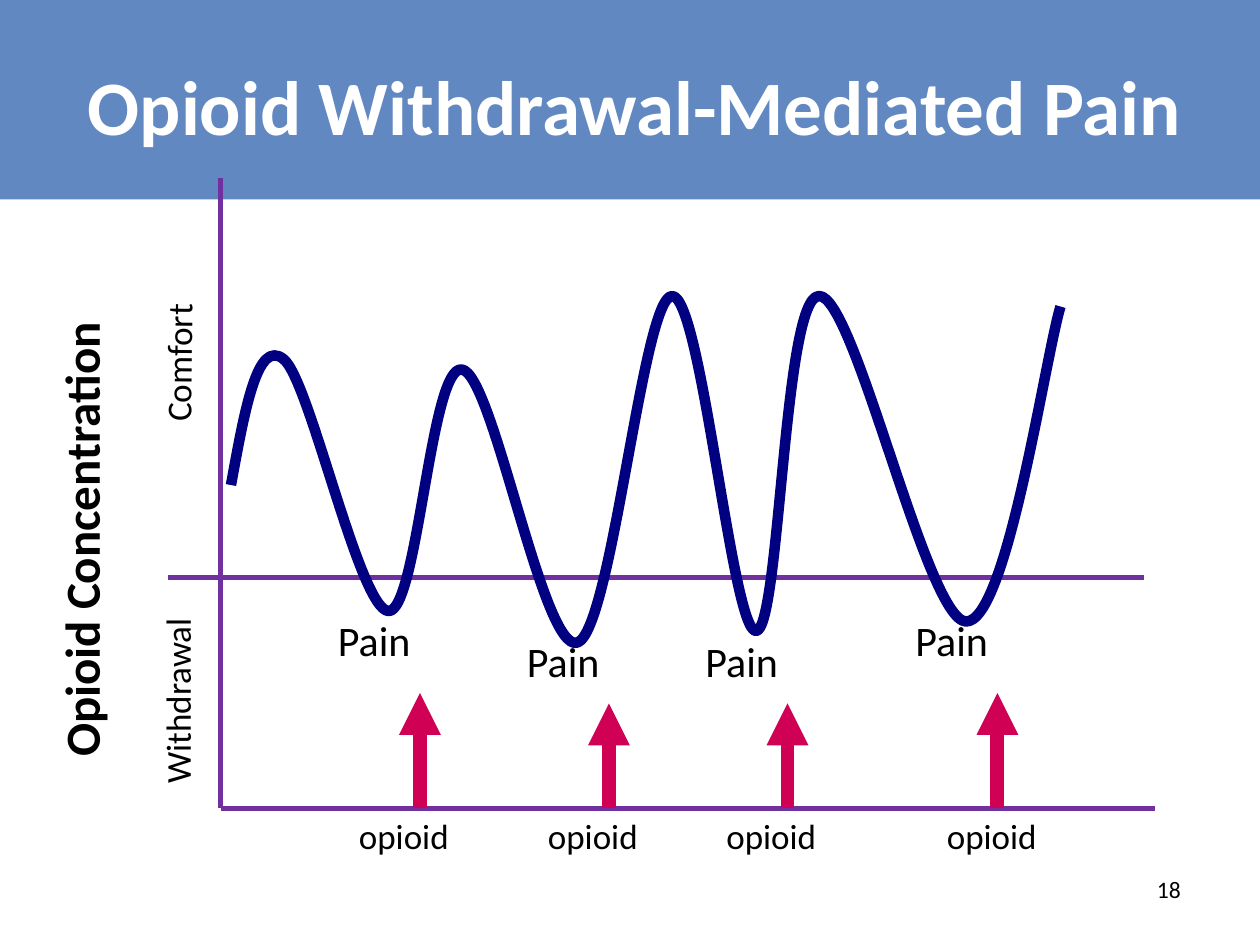
from dataclasses import dataclass

from lxml import etree
from pptx import Presentation
from pptx.dml.color import RGBColor
from pptx.enum.shapes import MSO_CONNECTOR, MSO_SHAPE
from pptx.enum.text import MSO_ANCHOR, PP_ALIGN
from pptx.oxml.ns import qn
from pptx.util import Pt

PX = 7620  # EMU per px, 120 px to the inch
STRAIGHT = MSO_CONNECTOR.STRAIGHT
RECTANGLE = MSO_SHAPE.RECTANGLE
MIDDLE = MSO_ANCHOR.MIDDLE
LEFT, CENTER = PP_ALIGN.LEFT, PP_ALIGN.CENTER
TITLE_ONLY = 5


@dataclass(frozen=True)
class Theme:
    font: str = "Calibri"
    banner: str = "6188C1"
    title: str = "FFFFFF"
    text: str = "000000"
    axis: str = "7030A0"
    curve: str = "000080"
    dose: str = "D00054"
    title_size: float = 44
    heading_size: float = 28
    pain_size: float = 24
    label_size: float = 20
    number_size: float = 13.5
    axis_width: float = 3
    curve_width: float = 6
    dose_width: float = 8


@dataclass(frozen=True)
class Box:
    left: int
    top: int
    width: int
    height: int

    def inner(self, left, top, width, height):
        return Box(self.left + left, self.top + top, width, height)

    def emu(self):
        return [v * PX for v in (self.left, self.top, self.width, self.height)]


THEME = Theme()

# Positions below are relative to the chart box.
CURVE_START = (10, 292)
CURVE_SEGMENTS = [  # two control points and an end point each
    [(23, 221), (35, 152), (60, 172)],
    [(85, 191), (132, 410), (160, 412)],
    [(188, 413), (200, 177), (230, 182)],
    [(260, 186), (307, 453), (340, 442)],
    [(373, 430), (402, 113), (430, 112)],
    [(458, 110), (487, 431), (510, 431)],
    [(533, 431), (536, 112), (570, 112)],
    [(604, 110), (672, 420), (710, 422)],
    [(749, 423), (785, 172), (800, 122)],
]
DOSES = [  # arrow x, arrow tip y, label x
    (190, 490, 120),
    (370, 500, 300),
    (540, 500, 470),
    (740, 490, 680),
]
AXIS_LABELS = [  # text, box, rotation, size, bold
    ("Withdrawal", (-137, 471, 192, 53), 270, THEME.label_size, False),
    ("Comfort", (-175, 149, 270, 53), 270.6, THEME.label_size, False),
    ("Opioid Concentration", (-368, 310, 469, 68), 270, THEME.heading_size, True),
]


def write(frame, text, size, color=THEME.text, bold=False, align=LEFT):
    frame.text = text
    paragraph = frame.paragraphs[0]
    paragraph.alignment = align
    font = paragraph.runs[0].font
    formats = {"name": THEME.font, "size": Pt(size), "bold": bold}
    for attribute, value in formats.items():
        setattr(font, attribute, value)
    font.color.rgb = RGBColor.from_string(color)


def add_label(slide, box, text, size, rotation=0, **formats):
    label = slide.shapes.add_textbox(*box.emu())
    label.rotation = rotation
    label.text_frame.word_wrap = True
    write(label.text_frame, text, size, **formats)


def style_line(line, color, width):
    line.color.rgb = RGBColor.from_string(color)
    line.width = Pt(width)


def add_line(slide, box, start, end, color, width):
    ends = [v * PX for x, y in (start, end) for v in (box.left + x, box.top + y)]
    connector = slide.shapes.add_connector(STRAIGHT, *ends)
    style_line(connector.line, color, width)
    etree.SubElement(connector._element.spPr, qn("a:effectLst"))
    return connector


def add_title(slide, box):
    banner = slide.shapes.add_shape(RECTANGLE, *box.emu())
    banner.shadow.inherit = False
    banner.fill.solid()
    banner.fill.fore_color.rgb = RGBColor.from_string(THEME.banner)
    banner.line.fill.background()

    title = slide.shapes.title
    slide.shapes._spTree.append(title._element)  # in front of the banner
    place = box.inner(40, 60, 1130, 80).emu()
    for attribute, value in zip(("left", "top", "width", "height"), place):
        setattr(title, attribute, value)
    title.text_frame.vertical_anchor = MIDDLE
    write(title.text_frame, "Opioid Withdrawal-Mediated Pain",
          THEME.title_size, THEME.title, True, CENTER)


def add_axes(slide, box):
    base = box.height
    for start, end in [((0, 0), (0, base)),
                       ((0, base), (box.width, base)),
                       ((-50, 380), (box.width - 10, 380))]:
        add_line(slide, box, start, end, THEME.axis, THEME.axis_width)
    for text, place, rotation, size, bold in AXIS_LABELS:
        add_label(slide, box.inner(*place), text, size, rotation,
                  bold=bold, align=CENTER)


def add_curve(slide, box):
    """Draw the concentration as one smooth path of cubic segments."""
    builder = slide.shapes.build_freeform(*CURVE_START, scale=PX)
    points = [point for segment in CURVE_SEGMENTS for point in segment]
    builder.add_line_segments(points, close=False)
    curve = builder.convert_to_shape(box.left * PX, box.top * PX)
    curve.shadow.inherit = False
    curve.fill.background()
    style_line(curve.line, THEME.curve, THEME.curve_width)

    # Every three straight steps become one cubic segment.
    outline = next(curve._element.iter(qn("a:path")))
    steps = outline.findall(qn("a:lnTo"))
    for first in range(0, len(steps), 3):
        cubic = etree.SubElement(outline, qn("a:cubicBezTo"))
        for step in steps[first:first + 3]:
            cubic.append(step[0])
            outline.remove(step)


def add_dose(slide, box, arrow_x, tip_y, label_x):
    arrow = add_line(slide, box, (arrow_x, box.height), (arrow_x, tip_y),
                     THEME.dose, THEME.dose_width)
    etree.SubElement(arrow.line._get_or_add_ln(), qn("a:tailEnd"), type="triangle")
    # Lower arrow tips leave room for lower pain labels.
    pain_y = 2 * tip_y - 571
    add_label(slide, box.inner(arrow_x - 90, pain_y, 95, 60), "Pain", THEME.pain_size)
    add_label(slide, box.inner(label_x, box.height, 110, 53),
              "opioid", THEME.label_size)


def add_chart_area(slide, box):
    add_axes(slide, box)
    add_curve(slide, box)
    for dose in DOSES:
        add_dose(slide, box, *dose)


def main():
    deck = Presentation()
    deck.slide_width, deck.slide_height = 1200 * PX, 900 * PX
    slide = deck.slides.add_slide(deck.slide_layouts[TITLE_ONLY])
    add_title(slide, Box(0, 0, 1200, 190))
    add_chart_area(slide, Box(210, 170, 890, 600))
    add_label(slide, Box(1090, 827, 90, 40), "18", THEME.number_size)
    deck.save("out.pptx")


if __name__ == "__main__":
    main()
